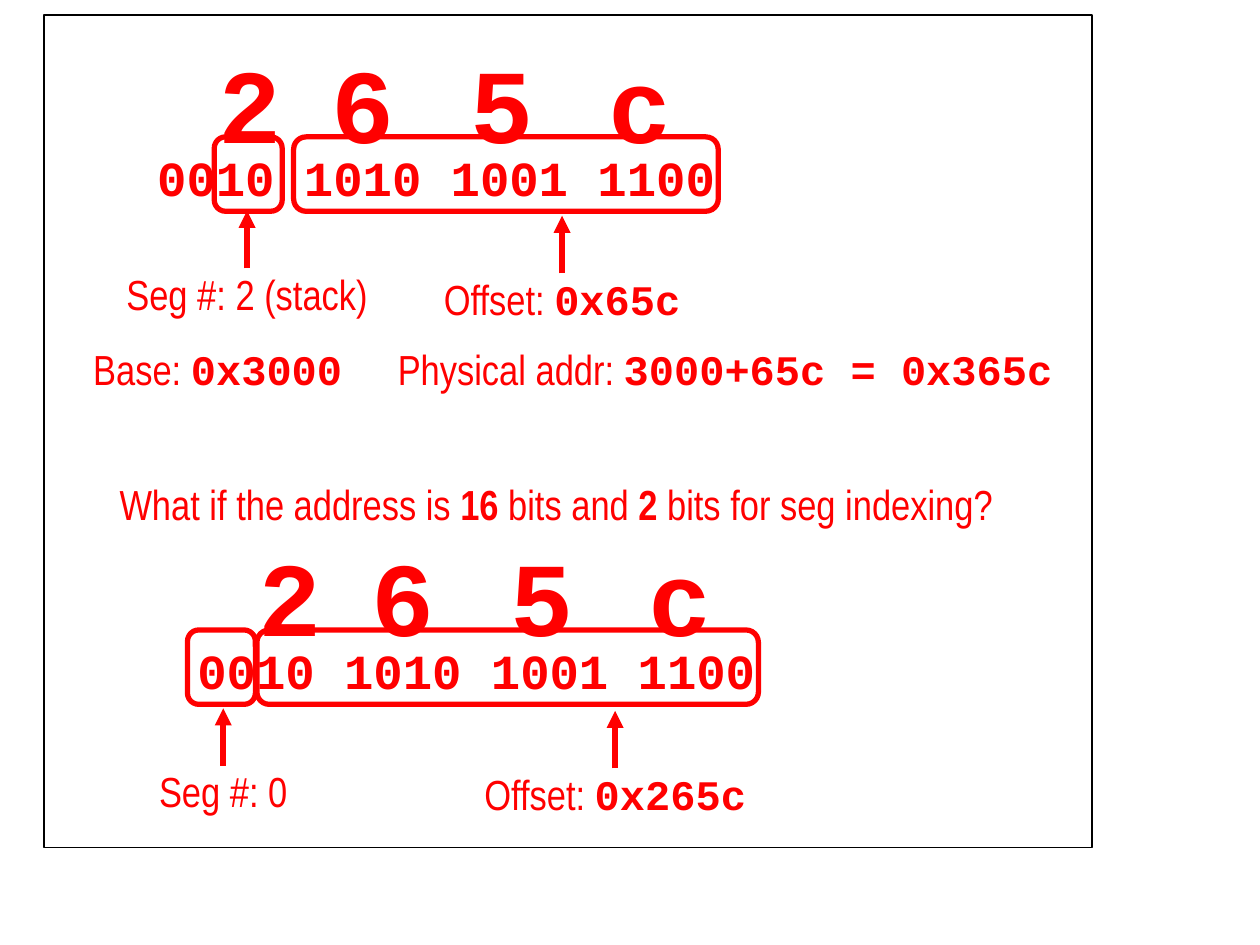
import pptx
import pptx.dml.color
import pptx.enum.shapes
import pptx.enum.text
import pptx.oxml
import pptx.oxml.ns
import pptx.util
from pptx.util import Cm

THEME = {
    "red": pptx.dml.color.RGBColor(0xFF, 0x00, 0x00),
    "black": pptx.dml.color.RGBColor(0x00, 0x00, 0x00),
    "frame_line": 3, "arrow_line": 3.25, "border_line": 0.85,
    # style name: (font, size, bold)
    "styles": {
        "plain": ("Arial Narrow", 24, False),
        "strong": ("Arial Narrow", 24, True),
        "code": ("Courier New", 24, True),
        "bits": ("Courier New", 28, True),
        "narrow gap": ("Courier New", 48, True),
        "digit": ("Courier New", 60, True),
        "wide gap": ("Courier New", 72, True),
    },
}

# Content: runs are (text, style); lengths are in centimetres
HEX_DIGITS = [("2", "digit"), (" ", "narrow gap"), ("6", "digit"), (" ", "wide gap"),
              ("5", "digit"), (" ", "wide gap"), ("c", "digit")]
BITS = [("0010 1010 1001 1100", "bits")]

# Frames are (left, width); labels are (centre, top, width, runs)
DIAGRAMS = [
    {"origin": (2.92, 2.84),
     "frames": [(4.32, 1.37), (5.92, 8.56)],
     "labels": [(4.98, 5.41, 4.93, [("Seg #: 2 (stack)", "plain")]),
                (11.33, 5.51, 4.83, [("Offset: ", "plain"), ("0x65c", "code")])]},
    {"origin": (3.73, 12.78),
     "frames": [(3.78, 1.37), (5.18, 10.11)],
     "labels": [(4.5, 15.44, 2.62, [("Seg #: 0", "plain")]),
                (12.4, 15.49, 5.33, [("Offset: ", "plain"), ("0x265c", "code")])]},
]

# Sentences are (left, top, width, runs)
SENTENCES = [
    (1.63, 6.81, 5.59, [("Base: ", "plain"), ("0x3000", "code")]),
    (7.77, 6.81, 13.84, [("Physical addr: ", "plain"), ("3000+65c = 0x365c", "code")]),
    (2.16, 9.53, 18.36, [("What if the address is ", "plain"), ("16", "strong"),
                         (" bits and ", "plain"), ("2", "strong"),
                         (" bits for seg indexing?", "plain")]),
]
BORDER = (0.89, 0.3, 21.13, 16.79)
ARROW_LENGTH = 1.16

ALIGN = pptx.enum.text.PP_ALIGN
SHAPES = pptx.enum.shapes.MSO_SHAPE


def add_text(slide, left, top, width, height, runs, align=ALIGN.LEFT, padded=True):
    box = slide.shapes.add_textbox(Cm(left), Cm(top), Cm(width), Cm(height))
    frame = box.text_frame
    frame.word_wrap = False
    frame.auto_size = pptx.enum.text.MSO_AUTO_SIZE.SHAPE_TO_FIT_TEXT
    if not padded:
        frame.margin_left = frame.margin_right = frame.margin_top = frame.margin_bottom = 0
    paragraph = frame.paragraphs[0]
    paragraph.alignment = align
    for text, style in runs:
        run = paragraph.add_run()
        run.text = text
        run.font.name, size, run.font.bold = THEME["styles"][style]
        run.font.size = pptx.util.Pt(size)
        run.font.color.rgb = THEME["red"]


def add_outline(slide, kind, left, top, width, height, color, line_width):
    shape = slide.shapes.add_shape(kind, Cm(left), Cm(top), Cm(width), Cm(height))
    shape.shadow.inherit = False
    shape.fill.background()
    shape.line.color.rgb = THEME[color]
    shape.line.width = pptx.util.Pt(line_width)


def add_up_arrow(slide, x, bottom):
    arrow = slide.shapes.add_connector(
        pptx.enum.shapes.MSO_CONNECTOR.STRAIGHT,
        Cm(x), Cm(bottom), Cm(x), Cm(bottom - ARROW_LENGTH))
    arrow.line.color.rgb = THEME["red"]
    arrow.line.width = pptx.util.Pt(THEME["arrow_line"])
    properties = arrow.line._get_or_add_ln()
    head = pptx.oxml.parse_xml(
        f'<a:tailEnd {pptx.oxml.ns.nsdecls("a")} type="triangle"/>')
    properties.append(head)
    effects = pptx.oxml.parse_xml(f'<a:effectLst {pptx.oxml.ns.nsdecls("a")}/>')
    properties.addnext(effects)


def add_diagram(slide, diagram):
    left, top = diagram["origin"]
    # Hexadecimal digits above their bits
    add_text(slide, left + 1.12, top - 2.62, 9.75, 3.33, HEX_DIGITS, ALIGN.RIGHT)
    add_text(slide, left, top, 11.86, 1.45, BITS)
    # Frames around segment and offset bits
    for frame_left, width in diagram["frames"]:
        add_outline(slide, SHAPES.ROUNDED_RECTANGLE, frame_left, top - 0.08, width, 1.5,
                    "red", THEME["frame_line"])
    # Labels, each with an arrow rising from its top centre
    for centre, label_top, width, runs in diagram["labels"]:
        add_text(slide, centre - width / 2, label_top, width, 1.02, runs,
                 ALIGN.CENTER, padded=False)
        add_up_arrow(slide, centre, label_top)


def main():
    presentation = pptx.Presentation()
    presentation.slide_width, presentation.slide_height = Cm(25.4), Cm(19.05)
    slide = presentation.slides.add_slide(presentation.slide_layouts[6])
    for diagram in DIAGRAMS:
        add_diagram(slide, diagram)
    for left, top, width, runs in SENTENCES:
        add_text(slide, left, top, width, 1.27, runs)
    # Border around everything
    add_outline(slide, SHAPES.RECTANGLE, *BORDER, "black", THEME["border_line"])
    presentation.save("out.pptx")


if __name__ == "__main__":
    main()
